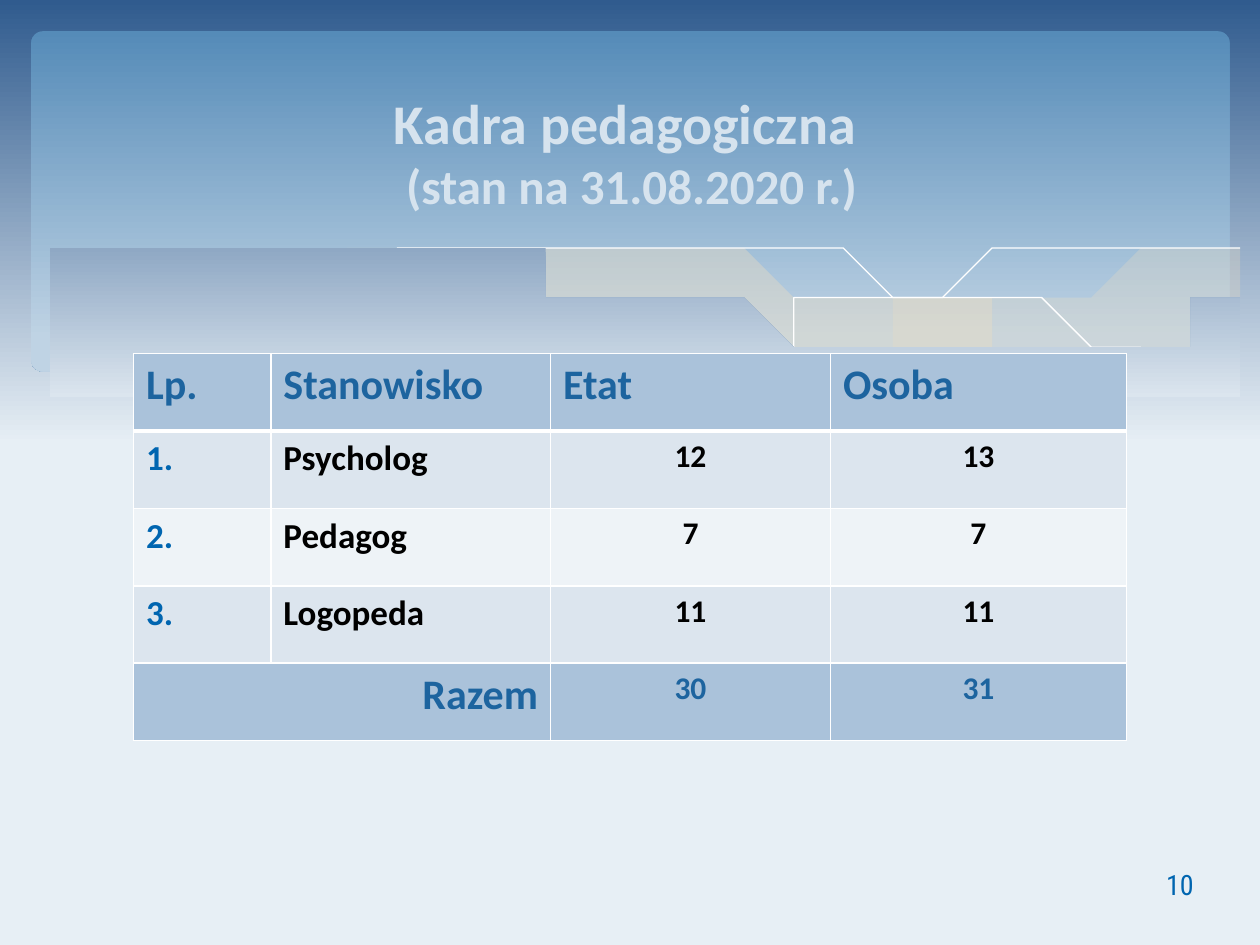
from lxml.etree import SubElement
from pptx import Presentation
from pptx.dml.color import RGBColor
from pptx.enum.shapes import MSO_SHAPE
from pptx.enum.text import MSO_ANCHOR, PP_ALIGN
from pptx.oxml.ns import qn
from pptx.util import Cm, Pt

COLORS = {
    "sky": "305B8E", "mist": "E7EFF5", "panel_top": "558BB8", "panel_bottom": "BFD3E4",
    "sand": "EBDDC3", "white": "FFFFFF", "title": "D6E3EE", "heading": "1D649F",
    "accent": "0065B0", "black": "000000", "header_fill": "AAC2DA",
    "odd_fill": "DCE5EE", "even_fill": "EEF3F7",
}
WIDTH, HEIGHT = 25.4, 19.05
FADE_END = 0.47

# Each wave is a chain of curves; points are in centimetres.
RIGHT_BAND = [
    [(24.77, 5.08), (23.75, 5.26), (21.87, 5.66), (19.79, 6.15), (17.93, 6.53), (16.79, 6.73)],
    [(16.79, 6.73), (18.26, 6.91), (19.53, 7.04), (20.68, 7.06), (21.92, 6.99),
     (22.99, 6.83), (23.93, 6.58), (24.77, 6.27)],
]
LEFT_BAND = [
    [(22.68, 6.93), (21.26, 6.73), (19.69, 6.45), (17.93, 6.1), (15.98, 5.64),
     (14.1, 5.21), (12.42, 4.93), (10.67, 4.75), (9.17, 4.7), (7.26, 4.85)],
    [(7.26, 4.85), (9.19, 5.16), (11.4, 5.64), (13.46, 6.1), (15.27, 6.48),
     (16.89, 6.76), (18.34, 6.96), (19.63, 7.04), (21.03, 7.06), (22.68, 6.93)],
]
FALLING_LINE = [
    [(7.85, 4.95), (8.74, 4.83), (10.19, 4.75), (11.91, 4.8), (14.12, 5),
     (16.15, 5.28), (18.47, 5.74), (21.11, 6.38), (23.04, 6.91)],
]
RISING_LINE = [
    [(15.57, 6.53), (17.65, 5.97), (19.71, 5.49), (22, 5.05), (23.47, 4.83), (24.77, 4.7)],
]
FOREGROUND_TOP, FOREGROUND_BOTTOM = 4.67, 8.36
FOREGROUND = [
    [(24.82, 6.25), (23.62, 6.65), (22.23, 6.93), (20.55, 7.04), (18.9, 6.96),
     (16.97, 6.73), (14.71, 6.35), (11.35, 5.59), (9.27, 5.13), (7.42, 4.83),
     (5.84, 4.7), (4.5, FOREGROUND_TOP), (3.02, 4.75), (1.7, 5), (0.58, 5.41)],
    [(0.58, FOREGROUND_BOTTOM), (24.82, FOREGROUND_BOTTOM)],
]

COLUMN_WIDTHS = [2.77, 5.64, 5.64, 5.97]
ROW_HEIGHT = 1.56
ROWS = [
    ["Lp.", "Stanowisko", "Etat", "Osoba"],
    ["1.", "Psycholog", "12", "13"],
    ["2.", "Pedagog", "7", "7"],
    ["3.", "Logopeda", "11", "11"],
    ["Razem", "", "30", "31"],
]


def rgb(name):
    return RGBColor.from_string(COLORS[name])


def set_gradient(fill, start, end, end_position=1.0):
    """Fill from top to bottom between two RGB colours."""
    fill.gradient()
    fill.gradient_angle = 270
    for stop, color, position in zip(fill.gradient_stops, (start, end), (0, end_position)):
        stop.color.rgb = color
        stop.position = position


def sky_color(y):
    """Colour of the slide background at a height in centimetres."""
    share = min(y / HEIGHT / FADE_END, 1)
    return RGBColor(*(round(a + (b - a) * share) for a, b in zip(rgb("sky"), rgb("mist"))))


def smooth(knots, steps=4):
    """Sample a Catmull-Rom curve through the knots."""
    padded = [knots[0], *knots, knots[-1]]
    points = [knots[0]]
    for a, b, c, d in zip(padded, padded[1:], padded[2:], padded[3:]):
        for step in range(1, steps + 1):
            t = step / steps
            points.append(tuple(
                (2 * q + (r - p) * t + (2 * p - 5 * q + 4 * r - s) * t ** 2
                 + (3 * q - p - 3 * r + s) * t ** 3) / 2
                for p, q, r, s in zip(a, b, c, d)))
    return points


def add_wave(slide, curves, closed=True):
    points = [point for curve in curves for point in smooth(curve)]
    builder = slide.shapes.build_freeform(*points[0], scale=Cm(1))
    builder.add_line_segments(points[1:], close=closed)
    shape = builder.convert_to_shape()
    shape.shadow.inherit = False
    shape.line.fill.background()
    return shape


def add_band(slide, curves, opacity):
    shape = add_wave(slide, curves)
    shape.fill.solid()
    shape.fill.fore_color.rgb = rgb("sand")
    color = shape.fill._xPr.find(".//" + qn("a:srgbClr"))
    SubElement(color, qn("a:alpha"), val=str(opacity * 1000))


def add_wave_line(slide, curves):
    shape = add_wave(slide, curves, closed=False)
    shape.fill.background()
    shape.line.color.rgb = rgb("white")
    shape.line.width = Pt(0)


def add_backdrop(slide):
    set_gradient(slide.background.fill, rgb("sky"), rgb("mist"), FADE_END)
    panel = slide.shapes.add_shape(
        MSO_SHAPE.ROUNDED_RECTANGLE, Cm(0.63), Cm(0.63), Cm(24.16), Cm(6.86))
    panel.adjustments[0] = 0.034
    panel.shadow.inherit = False
    panel.line.fill.background()
    set_gradient(panel.fill, rgb("panel_top"), rgb("panel_bottom"), 0.9)
    add_band(slide, RIGHT_BAND, 29)
    add_band(slide, LEFT_BAND, 40)
    add_wave_line(slide, FALLING_LINE)
    add_wave_line(slide, RISING_LINE)
    foreground = add_wave(slide, FOREGROUND)
    set_gradient(foreground.fill, sky_color(FOREGROUND_TOP), sky_color(FOREGROUND_BOTTOM))


def set_font(font, size, color, name="Calibri", bold=True):
    font.name, font.size, font.bold = name, Pt(size), bold
    font.color.rgb = rgb(color)


def add_text_box(slide, left, top, width, height):
    """Add a middle-anchored text box and return its centred paragraph."""
    frame = slide.shapes.add_textbox(Cm(left), Cm(top), Cm(width), Cm(height)).text_frame
    frame.word_wrap = True
    frame.vertical_anchor = MSO_ANCHOR.MIDDLE
    frame.paragraphs[0].alignment = PP_ALIGN.CENTER
    return frame.paragraphs[0]


def add_title(slide):
    paragraph = add_text_box(slide, 1.3, 1.32, 22.86, 3.48)
    set_font(paragraph.font, 32, "title")
    paragraph.add_run().text = "Kadra pedagogiczna "
    paragraph.add_line_break()
    date = paragraph.add_run()
    date.text = "(stan na 31.08.2020 r.)"
    date.font.size = Pt(28)


def add_page_number(slide):
    paragraph = add_text_box(slide, 22.17, 17.32, 3.23, 1.02)
    paragraph.text = "10"
    set_font(paragraph.font, 16, "accent", "Roboto Condensed", bold=False)


def set_borders(cell, top, bottom):
    properties = cell._tc.get_or_add_tcPr()
    for side, width in (("L", 1), ("R", 1), ("T", top), ("B", bottom)):
        line = SubElement(properties, qn("a:ln" + side), w=str(Pt(width)))
        fill = SubElement(line, qn("a:solidFill"))
        SubElement(fill, qn("a:srgbClr"), val=COLORS["white"])


def cell_style(row, column):
    """Return size, colour and alignment for a cell's text."""
    if row == 0:
        return 24, "heading", PP_ALIGN.LEFT
    is_total = row == len(ROWS) - 1
    if column >= 2:
        return 18, "heading" if is_total else "black", PP_ALIGN.CENTER
    if is_total:
        return 24, "heading", PP_ALIGN.RIGHT
    return 20, "black" if column else "accent", PP_ALIGN.LEFT


def add_staff_table(slide):
    last = len(ROWS) - 1
    table = slide.shapes.add_table(
        len(ROWS), len(COLUMN_WIDTHS), Cm(2.69), Cm(7.13),
        Cm(sum(COLUMN_WIDTHS)), Cm(ROW_HEIGHT * len(ROWS))).table
    for column, width in zip(table.columns, COLUMN_WIDTHS):
        column.width = Cm(width)
    for row, values in enumerate(ROWS):
        table.rows[row].height = Cm(ROW_HEIGHT)
        banding = "odd_fill" if row % 2 else "even_fill"
        for column, value in enumerate(values):
            cell = table.cell(row, column)
            set_borders(cell, 3 if row == 1 else 1, 3 if row == 0 else 1)
            cell.fill.solid()
            cell.fill.fore_color.rgb = rgb("header_fill" if row in (0, last) else banding)
            size, color, alignment = cell_style(row, column)
            paragraph = cell.text_frame.paragraphs[0]
            paragraph.text = value
            paragraph.alignment = alignment
            set_font(paragraph.font, size, color)
    table.cell(last, 0).merge(table.cell(last, 1))


def main():
    presentation = Presentation()
    presentation.slide_width, presentation.slide_height = Cm(WIDTH), Cm(HEIGHT)
    slide = presentation.slides.add_slide(presentation.slide_layouts[6])
    add_backdrop(slide)
    add_title(slide)
    add_staff_table(slide)
    add_page_number(slide)
    presentation.save("out.pptx")


if __name__ == "__main__":
    main()
